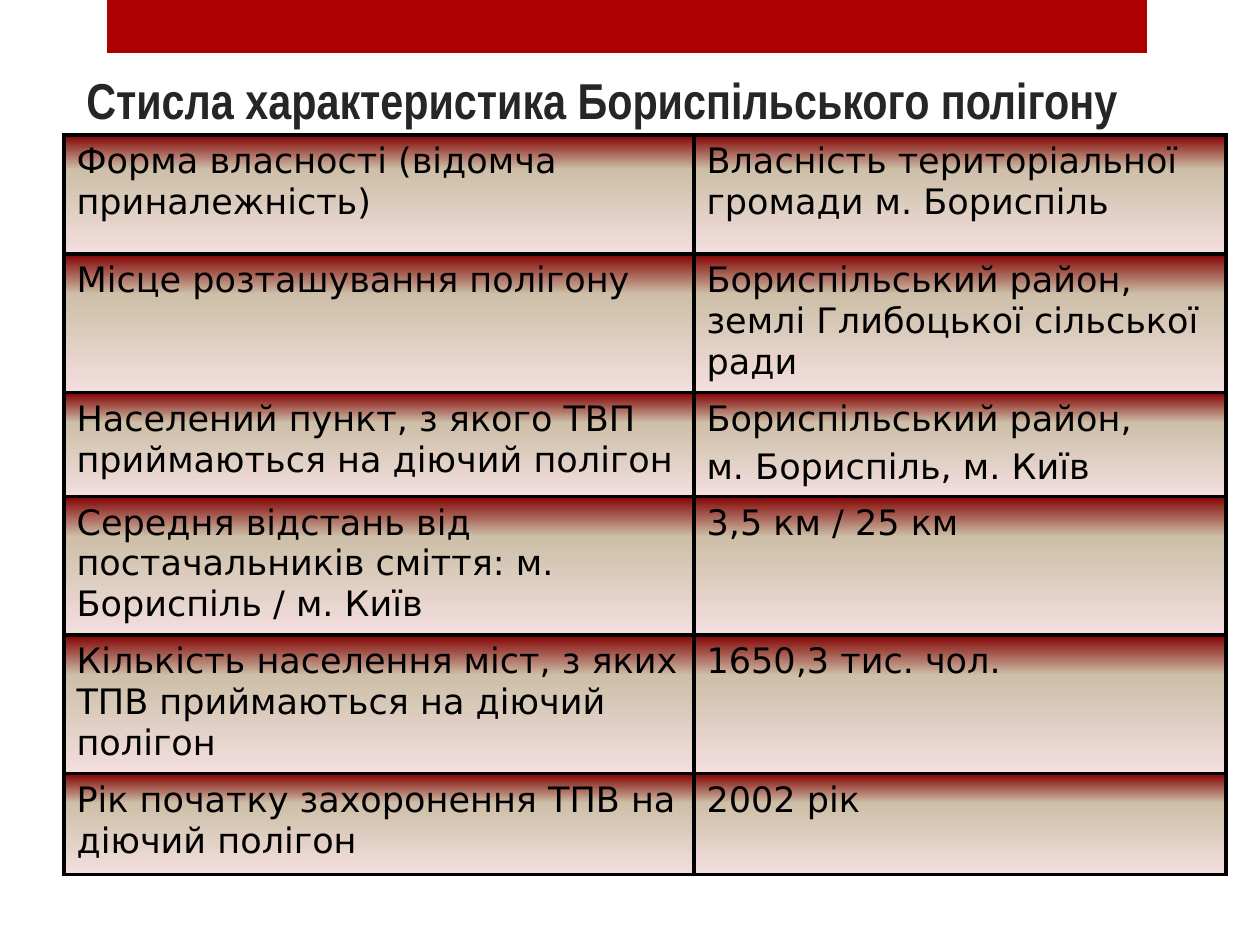
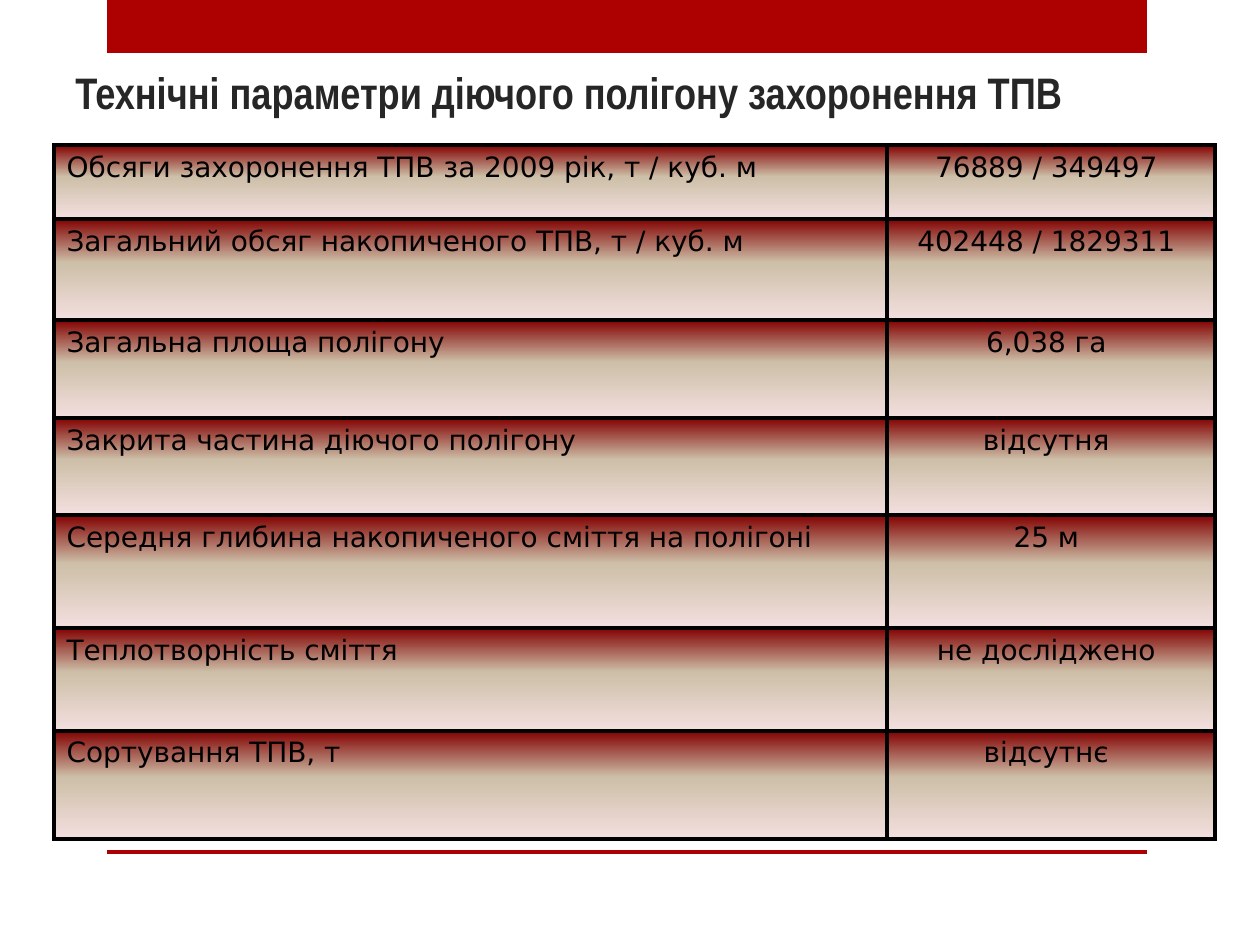
from lxml import etree
from pptx import Presentation
from pptx import util as u
from pptx.dml import color
from pptx.enum import shapes, text
from pptx.oxml import ns

COLORS = {"band": "AD0101", "title": "262626", "ink": "000000",
          "dark": "820101", "sand": "CDBFA8", "pale": "F3DFDF"}
FONTS = {"title": "Arial Narrow", "body": "DejaVu Sans"}
BANDS = [(107, 0, 1040, 53), (107, 850, 1040, 4)]
LEFT, CENTER = text.PP_ALIGN.LEFT, text.PP_ALIGN.CENTER

OWNERSHIP_ROWS = [
    (119, "Форма власності (відомча приналежність)",
     "Власність територіальної громади м. Бориспіль"),
    (135, "Місце розташування полігону",
     "Бориспільський район, землі Глибоцької сільської ради"),
    (101, "Населений пункт, з якого ТВП приймаються на діючий полігон",
     "Бориспільський район,\nм. Бориспіль, м. Київ"),
    (135, "Середня відстань від постачальників сміття: м. Бориспіль / м. Київ",
     "3,5 км / 25 км"),
    (135, "Кількість населення міст, з яких ТПВ приймаються на діючий полігон",
     "1650,3 тис. чол."),
    (101, "Рік початку захоронення ТПВ на діючий полігон", "2002 рік"),
]
TECHNICAL_ROWS = [
    (74, "Обсяги захоронення ТПВ за 2009 рік, т / куб. м", "76889 / 349497"),
    (101, "Загальний обсяг накопиченого ТПВ, т / куб. м", "402448 / 1829311"),
    (98, "Загальна площа полігону", "6,038 га"),
    (97, "Закрита частина діючого полігону", "відсутня"),
    (113, "Середня глибина накопиченого сміття на полігоні", "25 м"),
    (103, "Теплотворність сміття", "не досліджено"),
    (108, "Сортування ТПВ, т", "відсутнє"),
]


def px(length):
    return u.Emu(round(length * 914400 / 126))


def assign(target, values):
    for name, value in values.items():
        setattr(target, name, value)


def add_color(parent, name):
    etree.SubElement(parent, ns.qn("a:srgbClr"), val=COLORS[name])


class Deck:
    def __init__(self):
        self.deck = Presentation()
        assign(self.deck, {"slide_width": px(1260), "slide_height": px(945)})
        self.page = None

    def add_page(self, title, title_place, title_size):
        self.page = self.deck.slides.add_slide(self.deck.slide_layouts[6])
        for place in BANDS:
            self.add_band(place)
        self.add_title(title, title_place, title_size)

    def add_band(self, place):
        band = self.page.shapes.add_shape(shapes.MSO_SHAPE.RECTANGLE, *map(px, place))
        band.shadow.inherit = False
        band.fill.solid()
        band.fill.fore_color.rgb = color.RGBColor.from_string(COLORS["band"])
        band.line.fill.background()

    def set_words(self, frame, words, ink, align=LEFT, **font):
        frame.text = words
        for index, para in enumerate(frame.paragraphs):
            gap = u.Pt(font["size"].pt * 0.2 if index else 0)
            assign(para, {"alignment": align, "space_before": gap})
            for span in para.runs:
                assign(span.font, font)
                span.font.color.rgb = color.RGBColor.from_string(COLORS[ink])

    def add_title(self, words, place, size):
        box = self.page.shapes.add_textbox(*map(px, place))
        assign(box.text_frame, {"word_wrap": True,
                                "vertical_anchor": text.MSO_ANCHOR.BOTTOM})
        self.set_words(box.text_frame, words, "title", name=FONTS["title"],
                       size=u.Pt(size), bold=True)

    def style_cell(self, cell, middle):
        properties = cell._tc.get_or_add_tcPr()
        for side in ("lnL", "lnR", "lnT", "lnB"):
            border = etree.SubElement(properties, ns.qn("a:" + side), w=str(u.Pt(2.25)))
            add_color(etree.SubElement(border, ns.qn("a:solidFill")), "ink")
        gradient = etree.SubElement(properties, ns.qn("a:gradFill"), rotWithShape="1")
        stops = etree.SubElement(gradient, ns.qn("a:gsLst"))
        for position, name in ((0, "dark"), (middle, "sand"), (100, "pale")):
            stop = etree.SubElement(stops, ns.qn("a:gs"), pos=str(position * 1000))
            add_color(stop, name)
        etree.SubElement(gradient, ns.qn("a:lin"), ang="5400000", scaled="0")

    def add_table(self, corner, widths, rows, size, middle, value_align, value_margin):
        heights = [row[0] for row in rows]
        place = (*corner, sum(widths), sum(heights))
        table = self.page.shapes.add_table(len(rows), len(widths), *map(px, place)).table
        assign(table, {"first_row": False, "horz_banding": False})
        for column, width in zip(table.columns, widths):
            column.width = px(width)
        formats = ((LEFT, 13), (value_align, value_margin))
        for line, (height, *entries) in zip(table.rows, rows):
            line.height = px(height)
            for cell, words, (align, margin) in zip(line.cells, entries, formats):
                cell.margin_right = px(margin)
                self.set_words(cell.text_frame, words, "ink", align,
                               name=FONTS["body"], size=u.Pt(size))
                self.style_cell(cell, middle)


def main():
    show = Deck()
    show.add_page("Стисла характеристика Бориспільського полігону",
                  (74, 26, 1134, 110), 28.8)
    show.add_table((64, 135), (630, 532), OWNERSHIP_ROWS, 20, 29, LEFT, 13)
    show.add_page("Технічні параметри діючого полігону захоронення ТПВ",
                  (63, 38, 1143, 87), 25.2)
    show.add_table((54, 145), (833, 328), TECHNICAL_ROWS, 16, 43, CENTER, 22)
    show.deck.save("out.pptx")


if __name__ == "__main__":
    main()
